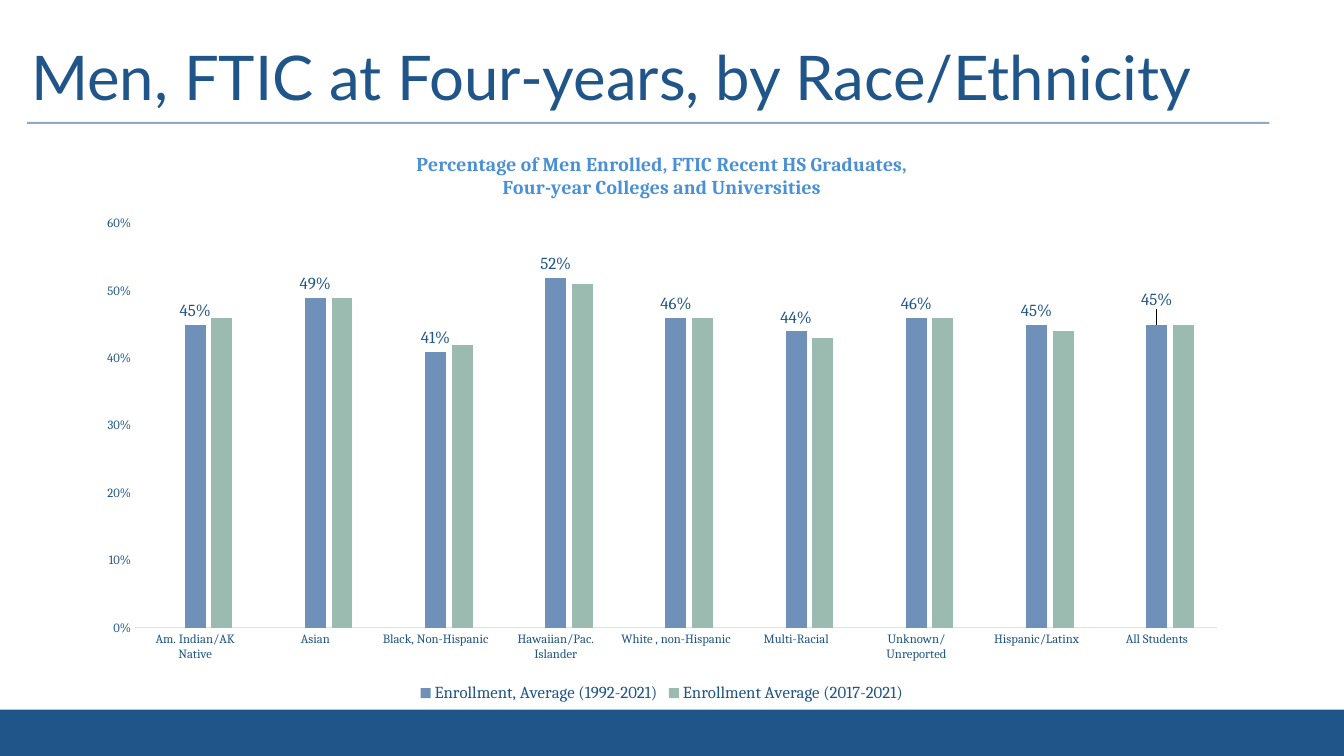
from dataclasses import dataclass
from typing import Optional

import pptx
import pptx.chart.data
import pptx.dml.color
import pptx.enum.chart
import pptx.enum.shapes
import pptx.enum.text
import pptx.oxml
import pptx.oxml.ns
import pptx.util
from lxml import etree

Inches = pptx.util.Inches
Pt = pptx.util.Pt
RGBColor = pptx.dml.color.RGBColor
qn = pptx.oxml.ns.qn

NAVY = RGBColor(0x20, 0x55, 0x8A)
STEEL = RGBColor(0x6F, 0x90, 0xB8)
SAGE = RGBColor(0x9B, 0xBB, 0xB0)
SKY = RGBColor(0x4A, 0x90, 0xD6)
PALE = RGBColor(0xD6, 0xE5, 0xF5)
HEADING_FONT = "Lato"
CHART_FONT = "Cambria"

# Chart frame and the inner plot area, in inches on the slide
CHART_LEFT, CHART_TOP, CHART_WIDTH, CHART_HEIGHT = 0.83, 1.31, 11.47, 5.7
PLOT_LEFT, PLOT_TOP, PLOT_WIDTH, PLOT_HEIGHT = 1.34, 2.22, 10.73, 4.01


@dataclass(frozen=True)
class Enrollment:
    name: str
    shares: tuple[Optional[float], ...]
    color: RGBColor


GROUPS = (
    "Am. Indian/AK Native", "Asian", "Black, Non-Hispanic",
    "Hawaiian/Pac. Islander", "White , non-Hispanic", "Multi-Racial",
    "Unknown/ Unreported", "Hispanic/Latinx", "All Students",
)
ENROLLMENTS = (
    Enrollment("Series 1", (None,) * len(GROUPS), NAVY),
    Enrollment("Enrollment, Average (1992-2021)",
               (0.45, 0.49, 0.41, 0.52, 0.46, 0.44, 0.46, 0.45, 0.45), STEEL),
    Enrollment("Enrollment Average (2017-2021)",
               (0.46, 0.49, 0.42, 0.51, 0.46, 0.43, 0.46, 0.44, 0.45), SAGE),
)


def style_font(font, size: float, color: RGBColor = NAVY,
               name: str = CHART_FONT, bold: bool = False) -> None:
    font.size = Pt(size)
    font.name = name
    font.bold = bold
    font.color.rgb = color


def write_text(frame, text: str, *, size: float, color: RGBColor = NAVY,
               name: str = CHART_FONT, bold: bool = False) -> None:
    """Fill a text frame, one paragraph for each line of text."""
    for index, line in enumerate(text.split("\n")):
        paragraph = frame.add_paragraph() if index else frame.paragraphs[0]
        run = paragraph.add_run()
        run.text = line
        style_font(run.font, size, color, name, bold)


def manual_layout(inner: bool = False, **fractions: float):
    """Build a c:layout element from fractions of the chart frame."""
    layout = etree.Element(qn("c:layout"))
    manual = etree.SubElement(layout, qn("c:manualLayout"))
    if inner:
        etree.SubElement(manual, qn("c:layoutTarget"), val="inner")
        for mode in ("xMode", "yMode"):
            etree.SubElement(manual, qn(f"c:{mode}"), val="edge")
    for key, value in fractions.items():
        etree.SubElement(manual, qn(f"c:{key}"), val=str(value))
    return layout


def replace_layout(parent, layout, position: int) -> None:
    for old in parent.findall(qn("c:layout")):
        parent.remove(old)
    parent.insert(position, layout)


def add_frame(slide) -> None:
    """Draw the footer band and the rule under the heading."""
    footer = slide.shapes.add_shape(
        pptx.enum.shapes.MSO_SHAPE.RECTANGLE,
        Inches(-0.02), Inches(7.04), Inches(13.35), Inches(0.46))
    footer.shadow.inherit = False
    footer.fill.solid()
    footer.fill.fore_color.rgb = NAVY
    footer.line.fill.background()

    rule = slide.shapes.add_connector(
        pptx.enum.shapes.MSO_CONNECTOR.STRAIGHT,
        Inches(0.27), Inches(1.22), Inches(12.59), Inches(1.22))
    rule.line.color.rgb = NAVY
    rule.line.width = Pt(1.5)
    properties = rule._element.spPr
    etree.SubElement(next(properties.iter(qn("a:srgbClr"))), qn("a:alpha"), val="50000")
    etree.SubElement(properties, qn("a:effectLst"))


def add_heading(slide, text: str) -> None:
    heading = slide.shapes.add_textbox(
        Inches(0.21), Inches(0.31), Inches(12.09), Inches(0.89)).text_frame
    heading.word_wrap = True
    heading.vertical_anchor = pptx.enum.text.MSO_ANCHOR.MIDDLE
    write_text(heading, text, size=44, name=HEADING_FONT)


def style_axes(chart) -> None:
    for axis in (chart.category_axis, chart.value_axis):
        axis.major_tick_mark = pptx.enum.chart.XL_TICK_MARK.NONE
        axis.minor_tick_mark = pptx.enum.chart.XL_TICK_MARK.NONE
        axis.has_major_gridlines = False
        style_font(axis.tick_labels.font, 9)
    chart.category_axis.format.line.color.rgb = PALE
    chart.category_axis.format.line.width = Pt(0.75)
    shares = chart.value_axis
    shares.format.line.fill.background()
    shares.minimum_scale, shares.maximum_scale, shares.major_unit = 0, 0.6, 0.1
    shares.tick_labels.number_format = "0%"
    shares.tick_labels.number_format_is_linked = False


def label_averages(series) -> None:
    outside = pptx.enum.chart.XL_LABEL_POSITION.OUTSIDE_END
    labels = series.data_labels
    labels.show_value = True
    labels.number_format = "0%"
    labels.number_format_is_linked = False
    labels.position = outside
    style_font(labels.font, 12)
    # The label for all students sits a little higher
    total = series.points[len(GROUPS) - 1].data_label
    style_font(total.font, 12)
    total.position = outside
    replace_layout(total._get_or_add_dLbl(), manual_layout(x=0, y=-0.02), 1)


def add_enrollment_chart(slide) -> None:
    data = pptx.chart.data.CategoryChartData(number_format="0%")
    data.categories = GROUPS
    for enrollment in ENROLLMENTS:
        data.add_series(enrollment.name, enrollment.shares)
    chart = slide.shapes.add_chart(
        pptx.enum.chart.XL_CHART_TYPE.COLUMN_CLUSTERED,
        Inches(CHART_LEFT), Inches(CHART_TOP),
        Inches(CHART_WIDTH), Inches(CHART_HEIGHT), data).chart
    style_font(chart.font, 10)

    # Title
    chart.has_title = True
    write_text(chart.chart_title.text_frame,
               "Percentage of Men Enrolled, FTIC Recent HS Graduates,\n"
               "Four-year Colleges and Universities",
               size=14, color=SKY, bold=True)
    chart.chart_title.include_in_layout = False

    # Columns
    plot = chart.plots[0]
    plot.vary_by_categories = False
    plot.gap_width = 219
    plot.overlap = -27
    for series, enrollment in zip(plot.series, ENROLLMENTS):
        series.format.fill.solid()
        series.format.fill.fore_color.rgb = enrollment.color
        series.invert_if_negative = False
    label_averages(plot.series[1])
    style_axes(chart)
    replace_layout(chart._chartSpace.chart.plotArea, manual_layout(
        inner=True,
        x=(PLOT_LEFT - CHART_LEFT) / CHART_WIDTH,
        y=(PLOT_TOP - CHART_TOP) / CHART_HEIGHT,
        w=PLOT_WIDTH / CHART_WIDTH,
        h=PLOT_HEIGHT / CHART_HEIGHT), 0)

    # Legend, without the empty first series
    chart.has_legend = True
    chart.legend.position = pptx.enum.chart.XL_LEGEND_POSITION.BOTTOM
    chart.legend.include_in_layout = False
    style_font(chart.legend.font, 12)
    entry = etree.Element(qn("c:legendEntry"))
    etree.SubElement(entry, qn("c:idx"), val="0")
    etree.SubElement(entry, qn("c:delete"), val="1")
    chart.legend._element.find(qn("c:legendPos")).addnext(entry)


def main() -> None:
    presentation = pptx.Presentation()
    presentation.slide_width = Inches(13.33)
    presentation.slide_height = Inches(7.5)
    slide = presentation.slides.add_slide(presentation.slide_layouts[6])
    add_frame(slide)
    add_heading(slide, "Men, FTIC at Four-years, by Race/Ethnicity")
    add_enrollment_chart(slide)
    presentation.save("out.pptx")


if __name__ == "__main__":
    main()
